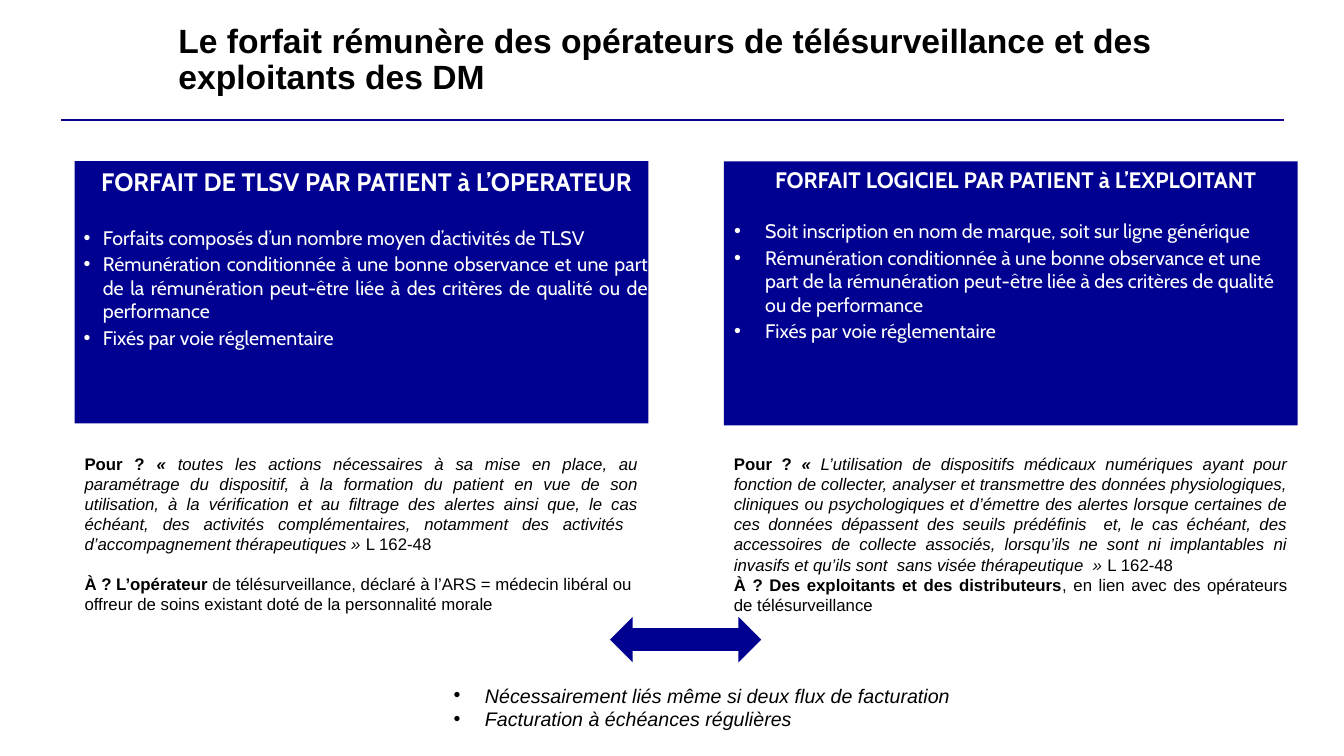
"""Build the slide on the two remote-monitoring payment packages."""
from lxml import etree
from pptx import Presentation
from pptx.dml.color import RGBColor
from pptx.enum.shapes import MSO_CONNECTOR, MSO_SHAPE
from pptx.enum.text import MSO_ANCHOR, MSO_AUTO_SIZE, PP_ALIGN
from pptx.oxml.ns import qn
from pptx.util import Inches, Pt

LEFT, CENTER, JUSTIFY = PP_ALIGN.LEFT, PP_ALIGN.CENTER, PP_ALIGN.JUSTIFY
TOP, MIDDLE = MSO_ANCHOR.TOP, MSO_ANCHOR.MIDDLE
NO_FIT, GROW = MSO_AUTO_SIZE.NONE, MSO_AUTO_SIZE.SHAPE_TO_FIT_TEXT
CARD, ARROW = MSO_SHAPE.ROUNDED_RECTANGLE, MSO_SHAPE.LEFT_RIGHT_ARROW
STRAIGHT = MSO_CONNECTOR.STRAIGHT
COLORS = {"navy": "000091", "rule": "0A0091", "white": "FFFFFF", "black": "000000"}
COLUMN_WIDTH = 5.69


def color(name):
    return RGBColor.from_string(COLORS[name])


def write(frame, *runs, size=12, font="Arial", ink="black", align=LEFT, margin=0,
          indent=0, bullet=False, after=0, spacing=1.0):
    """Add one paragraph made of (text, style) runs, where style holds b and/or i."""
    paragraph = frame.paragraphs[0]
    if paragraph.runs:
        paragraph = frame.add_paragraph()
    paragraph.alignment = align
    paragraph.line_spacing = spacing
    paragraph.space_before = Pt(0)
    paragraph.space_after = Pt(after)
    properties = paragraph._p.get_or_add_pPr()
    properties.set("marL", str(Inches(margin)))
    properties.set("indent", str(Inches(indent)))
    if bullet:
        etree.SubElement(properties, qn("a:buFont")).set("typeface", "Arial")
        etree.SubElement(properties, qn("a:buChar")).set("char", "•")
    for text, style in runs:
        run = paragraph.add_run()
        run.text = text
        run.font.name = font
        run.font.size = Pt(size)
        run.font.bold = "b" in style
        run.font.italic = "i" in style
        run.font.color.rgb = color(ink)


presentation = Presentation()
presentation.slide_width = Inches(13.33)
presentation.slide_height = Inches(7.5)
slide = presentation.slides.add_slide(presentation.slide_layouts[1])
shapes = slide.shapes

rule = shapes.add_connector(STRAIGHT, Inches(0.61), Inches(1.19), Inches(12.73), Inches(1.19))
rule.line.color.rgb = color("rule")
rule.line.width = Pt(1.75)
etree.SubElement(rule._element.spPr, qn("a:effectLst"))

title, links = shapes.title, slide.placeholders[1]
title.left, title.top, title.width, title.height = map(Inches, (1.67, 0.17, 11.02, 0.86))
title.text_frame.vertical_anchor = MIDDLE
title.text_frame.auto_size = NO_FIT
write(title.text_frame,
      ("Le forfait rémunère des opérateurs de télésurveillance et des exploitants des DM", "b"),
      size=24, spacing=0.9)

SHARED_BULLETS = [
    "Rémunération conditionnée à une bonne observance et une part de la rémunération "
    "peut-être liée à des critères de qualité ou de performance",
    "Fixés par voie réglementaire",
]
packages = [
    dict(left=0.74, height=2.6, heading="FORFAIT DE TLSV PAR PATIENT à L’OPERATEUR",
         heading_size=18, heading_gap=21, align=JUSTIFY, margin=0.28, indent=-0.19,
         first="Forfaits composés d’un nombre moyen d’activités de TLSV",
         purpose="toutes les actions nécessaires à sa mise en place, au paramétrage du "
                 "dispositif, à la formation du patient en vue de son utilisation, à la "
                 "vérification et au filtrage des alertes ainsi que, le cas échéant, des "
                 "activités complémentaires, notamment des activités  d’accompagnement "
                 "thérapeutiques » ",
         purpose_gap=13.8, payee="À ? L’opérateur", payee_align=LEFT,
         detail=" de télésurveillance, déclaré à l’ARS = médecin libéral ou offreur de "
                "soins existant doté de la personnalité morale"),
    dict(left=7.18, height=2.62, heading="FORFAIT LOGICIEL PAR PATIENT à L’EXPLOITANT",
         heading_size=16, heading_gap=18.6, align=LEFT, margin=0.41, indent=-0.31,
         first="Soit inscription en nom de marque, soit sur ligne générique",
         purpose="L’utilisation de dispositifs médicaux numériques ayant pour fonction de "
                 "collecter, analyser et transmettre des données physiologiques, cliniques "
                 "ou psychologiques et d’émettre des alertes lorsque certaines de ces "
                 "données dépassent des seuils prédéfinis  et, le cas échéant, des "
                 "accessoires de collecte associés, lorsqu’ils ne sont ni implantables ni "
                 "invasifs et qu’ils sont  sans visée thérapeutique  » ",
         purpose_gap=0, payee="À ? Des exploitants et des distributeurs",
         payee_align=JUSTIFY,
         detail=", en lien avec des opérateurs de télésurveillance"),
]

for package in packages:
    left, width = Inches(package["left"]), Inches(COLUMN_WIDTH)
    card = shapes.add_shape(CARD, left, Inches(1.6), width, Inches(package["height"]))
    card.adjustments[0] = 0
    card.shadow.inherit = False
    card.fill.solid()
    card.fill.fore_color.rgb = color("navy")
    card.line.fill.background()
    frame = card.text_frame
    frame.word_wrap = True
    frame.vertical_anchor = TOP
    frame.margin_left = frame.margin_right = 0
    write(frame, (package["heading"], "b"), size=package["heading_size"], font="Cabin",
          ink="white", align=CENTER, margin=0.1, after=package["heading_gap"])
    for item in [package["first"], *SHARED_BULLETS]:
        write(frame, (item, ""), size=14, font="Cabin", ink="white", align=package["align"],
              margin=package["margin"], indent=package["indent"], bullet=True, after=2)

    explanation = shapes.add_textbox(left, Inches(4.45), width, Inches(1.72))
    frame = explanation.text_frame
    frame.word_wrap = True
    frame.auto_size = GROW
    write(frame, ("Pour ? ", "b"), ("« ", "bi"), (package["purpose"], "i"), ("L 162-48", ""),
          align=JUSTIFY, after=package["purpose_gap"])
    write(frame, (package["payee"], "b"), (package["detail"], ""), align=package["payee_align"])

links.left, links.top, links.width, links.height = map(Inches, (4.4, 6.73, 5.55, 0.57))
links.text_frame.auto_size = GROW
for item in ["Nécessairement liés même si deux flux de facturation",
             "Facturation à échéances régulières"]:
    write(links.text_frame, (item, "i"), size=14, margin=0.31, indent=-0.31, bullet=True)

arrow = shapes.add_shape(ARROW, Inches(6.05), Inches(6.12), Inches(1.5), Inches(0.45))
arrow.shadow.inherit = False
arrow.fill.solid()
arrow.fill.fore_color.rgb = color("navy")
arrow.line.fill.background()

presentation.save("out.pptx")
